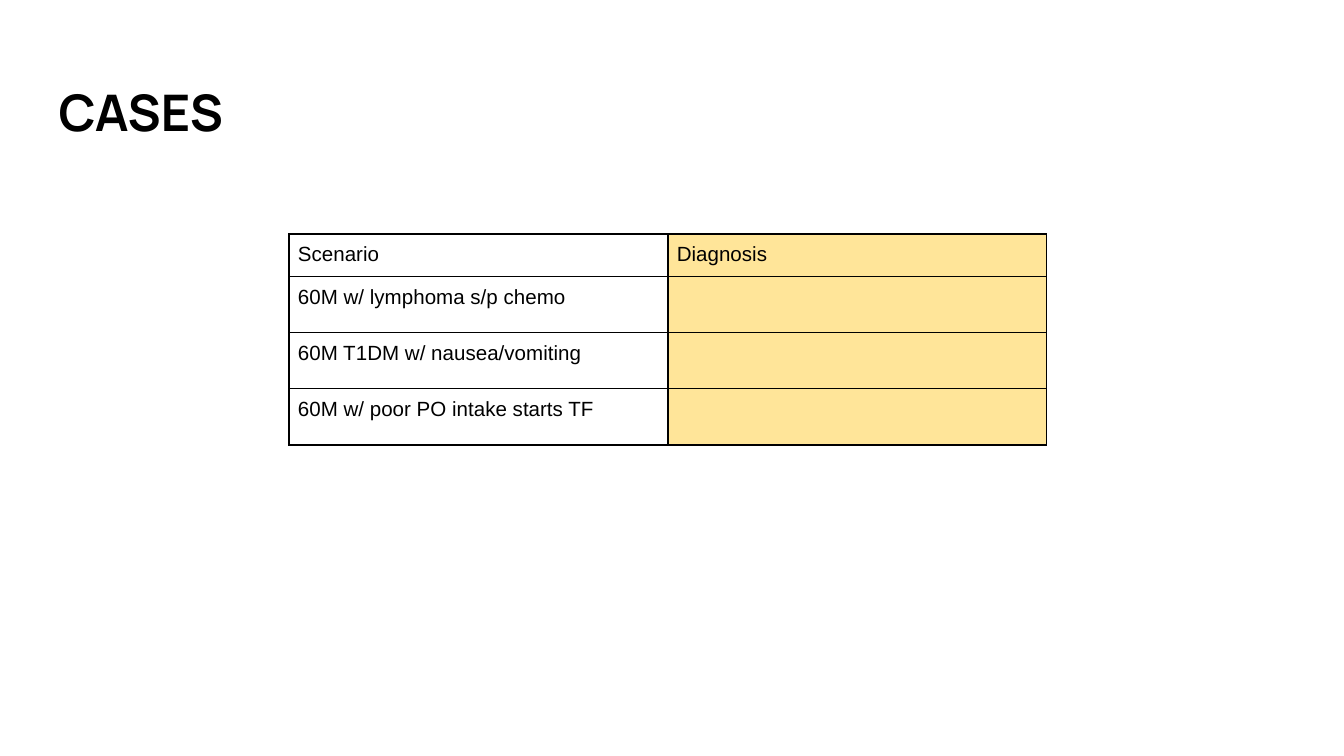
from lxml import etree
from pptx import Presentation
from pptx.dml.color import RGBColor
from pptx.enum.text import MSO_ANCHOR
from pptx.oxml.ns import qn
from pptx.util import Cm, Pt

BLACK = RGBColor(0x00, 0x00, 0x00)
WHITE = RGBColor(0xFF, 0xFF, 0xFF)
YELLOW = RGBColor(0xFF, 0xE5, 0x99)
MIDDLE = MSO_ANCHOR.MIDDLE

BLANK_LAYOUT = 6
CELL_SIZE = Pt(11)
CELL_MARGIN = Cm(0.17)
COLUMN_WIDTH = Cm(7.16)
HEADER_HEIGHT = Cm(0.79)
CASE_HEIGHT = Cm(1.06)
COLUMN_FILLS = [WHITE, YELLOW]
CASES = [
    ("Scenario", "Diagnosis"),
    ("60M w/ lymphoma s/p chemo", ""),
    ("60M T1DM w/ nausea/vomiting", ""),
    ("60M w/ poor PO intake starts TF", ""),
]


def format_runs(paragraph, font_name, size, bold=False):
    for run in paragraph.runs:
        run.font.name = font_name
        run.font.size = size
        run.font.bold = bold
        run.font.color.rgb = BLACK


def add_title(slide, text):
    box = slide.shapes.add_textbox(Cm(0.86), Cm(1.24), Cm(4.6), Cm(1.73))
    frame = box.text_frame
    frame.word_wrap = True
    frame.vertical_anchor = MIDDLE
    frame.margin_left = frame.margin_right = Cm(0.25)
    frame.margin_top = frame.margin_bottom = Cm(0.25)
    frame.text = text
    format_runs(frame.paragraphs[0], "Manrope", Pt(27), bold=True)


def add_borders(cell):
    """Put the four border lines ahead of the fill, as the schema requires."""
    properties = cell._tc.get_or_add_tcPr()
    for position, side in enumerate(("a:lnL", "a:lnR", "a:lnT", "a:lnB")):
        line = etree.Element(qn(side), w=str(Pt(1)))
        fill = etree.SubElement(line, qn("a:solidFill"))
        etree.SubElement(fill, qn("a:srgbClr"), val=str(BLACK))
        properties.insert(position, line)


def format_cell(cell, text, fill_color):
    cell.margin_left = cell.margin_right = CELL_MARGIN
    cell.margin_top = cell.margin_bottom = CELL_MARGIN
    cell.fill.solid()
    cell.fill.fore_color.rgb = fill_color
    add_borders(cell)
    paragraph = cell.text_frame.paragraphs[0]
    if text:
        paragraph.text = text
        format_runs(paragraph, "Arial", CELL_SIZE)
    else:
        # Without a size, an empty cell would stretch its row.
        etree.SubElement(paragraph._p, qn("a:endParaRPr"),
                         sz=str(CELL_SIZE.centipoints))


def add_case_table(slide):
    heights = [HEADER_HEIGHT] + [CASE_HEIGHT] * (len(CASES) - 1)
    columns = len(COLUMN_FILLS)
    table = slide.shapes.add_table(
        len(CASES), columns, Cm(5.46), Cm(4.42),
        COLUMN_WIDTH * columns, sum(heights)).table
    for column in table.columns:
        column.width = COLUMN_WIDTH
    for row, height, texts in zip(table.rows, heights, CASES):
        row.height = height
        for cell, text, fill_color in zip(row.cells, texts, COLUMN_FILLS):
            format_cell(cell, text, fill_color)


def main():
    presentation = Presentation()
    presentation.slide_width = Cm(25.4)
    presentation.slide_height = Cm(14.29)
    slide = presentation.slides.add_slide(
        presentation.slide_layouts[BLANK_LAYOUT])
    add_title(slide, "CASES")
    add_case_table(slide)
    presentation.save("out.pptx")


if __name__ == "__main__":
    main()
